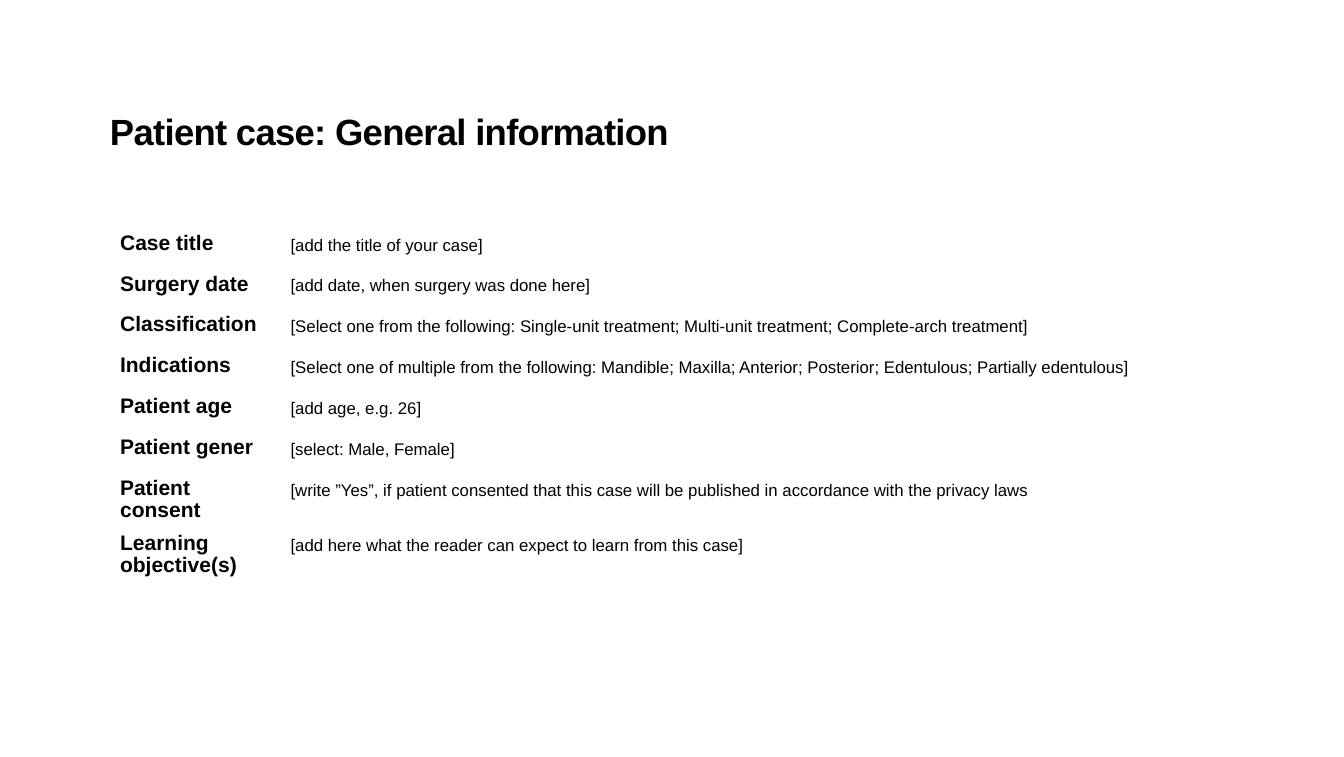
from pptx import Presentation
from pptx import util as u
from pptx.dml.color import RGBColor
from pptx.enum import text as t

BLACK = "000000"


def write(frame, words, size, bold=False, color=BLACK, line=u.Pt(16), tracking=None):
    """Put one formatted paragraph into a text frame."""
    paragraph = frame.paragraphs[0]
    paragraph.line_spacing = line
    run = paragraph.add_run()
    run.text = words
    run.font.name = "Arial"
    run.font.size = u.Pt(size)
    run.font.bold = bold
    run.font.color.rgb = RGBColor.from_string(color)
    if tracking is not None:
        run.font._element.set("spc", str(int(tracking * 100)))


case_details = [
    ("Case title", "[add the title of your case]"),
    ("Surgery date", "[add date, when surgery was done here]"),
    ("Classification", "[Select one from the following: Single-unit treatment; "
     "Multi-unit treatment; Complete-arch treatment]"),
    ("Indications", "[Select one of multiple from the following: Mandible; Maxilla; "
     "Anterior; Posterior; Edentulous; Partially edentulous]"),
]
patient_details = [
    ("Patient age", "[add age, e.g. 26]"),
    ("Patient gener", "[select: Male, Female]"),
    ("Patient consent", "[write ”Yes”, if patient consented that this case will be "
     "published in accordance with the privacy laws"),
    ("Learning objective(s)", "[add here what the reader can expect to learn from this case]"),
]

deck = Presentation()
deck.slide_width = u.Inches(13.32)
deck.slide_height = u.Inches(7.5)
slide = deck.slides.add_slide(deck.slide_layouts[6])

LEFT = u.Inches(1.09)
heading = slide.shapes.add_textbox(LEFT, u.Inches(0.3), u.Inches(10.41), u.Inches(1.22)).text_frame
heading.word_wrap = True
heading.vertical_anchor = t.MSO_ANCHOR.BOTTOM
heading.margin_left = heading.margin_right = heading.margin_top = heading.margin_bottom = 0
write(heading, "Patient case: General information", 26, bold=True, line=0.9, tracking=-0.5)

for top, details in ((2.25, case_details), (3.87, patient_details)):
    table = slide.shapes.add_table(len(details), 2, LEFT, u.Inches(top),
                                   u.Inches(10.31), u.Inches(1.62)).table
    table.first_row = table.horz_banding = False
    table.columns[0].width = u.Inches(1.69)
    table.columns[1].width = u.Inches(8.62)
    for row, (label, hint) in zip(table.rows, details):
        label_cell, hint_cell = row.cells
        write(label_cell.text_frame, label, 15, bold=True)
        write(hint_cell.text_frame, hint, 12)
        for cell in row.cells:
            cell.fill.background()

deck.save("out.pptx")
